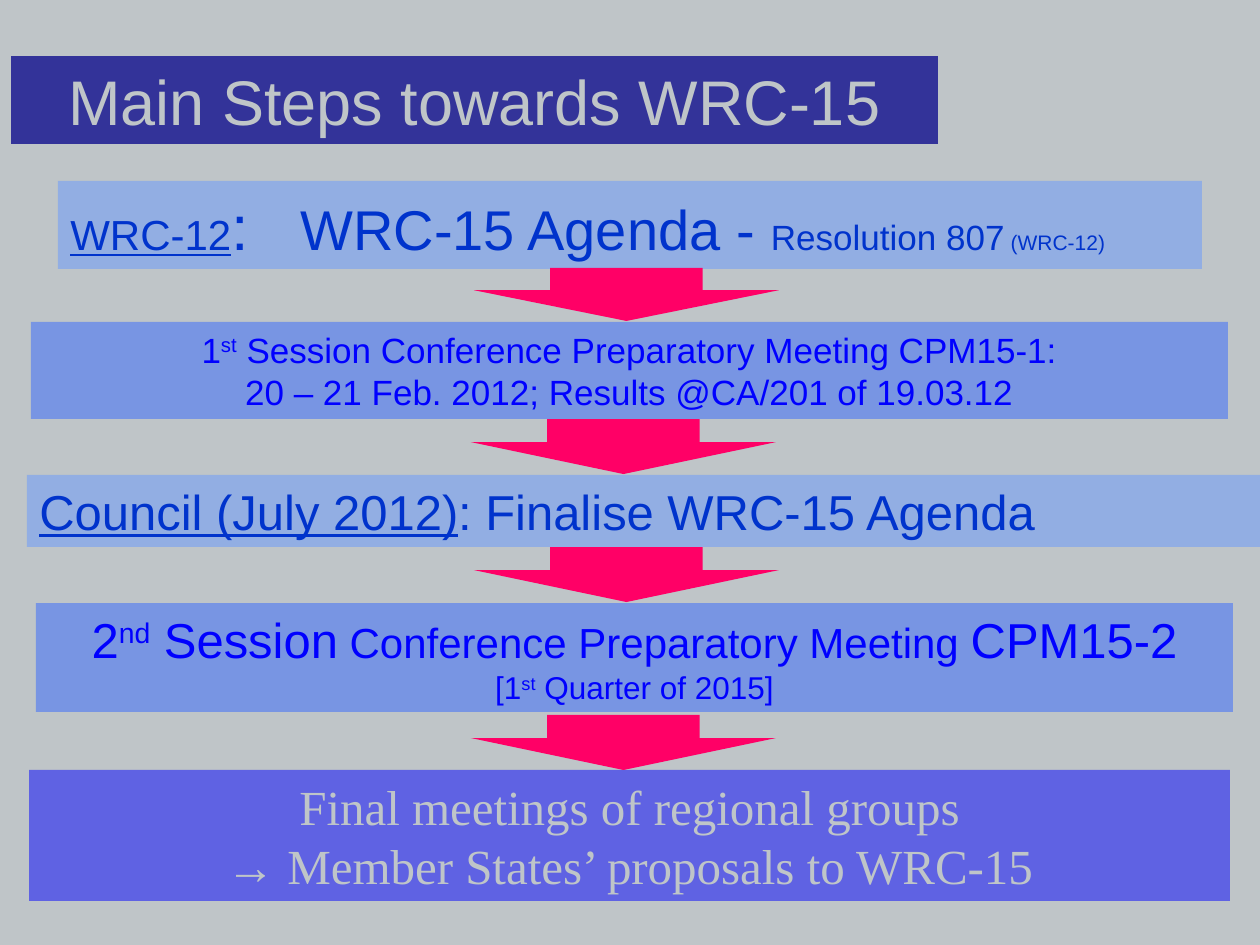
from dataclasses import dataclass

from lxml import etree
from pptx import Presentation, util as u
from pptx.dml.color import RGBColor
from pptx.enum import shapes, text
from pptx.oxml.ns import qn

PX = u.Inches(1) / 126
COLORS = {
    "grey": "BFC5C8", "navy": "333399", "sky": "6699FF", "azure": "3366FF",
    "blue": "0000FF", "cobalt": "0033CC", "pink": "FF0066",
}
LEFT, CENTER = text.PP_ALIGN.LEFT, text.PP_ALIGN.CENTER


@dataclass
class Run:
    text: str
    size: int
    underline: bool = False
    raised: bool = False


@dataclass
class Step:
    box: tuple[int, int, int, int]
    fill: str
    color: str
    paragraphs: list[list[Run]]
    align: text.PP_ALIGN = CENTER
    font: str = "Arial"
    tab: int = 0


@dataclass
class Arrow:
    left: int
    top: int
    height: int = 55
    width: int = 305


BREAK = Run("\n", 0)

TITLE = Step((11, 56, 927, 88), "navy", "grey",
             [[Run("Main Steps towards WRC-15", 36)]])

STEPS = [
    Step((58, 181, 1144, 88), "sky", "cobalt", [[
        Run("WRC-12", 24, underline=True), Run(":\t", 36),
        Run("WRC-15 Agenda - ", 32), Run("Resolution 807", 20),
        Run(" (WRC-12)", 12)]], LEFT, tab=230),
    Step((31, 322, 1197, 97), "azure", "blue", [[
        Run("1", 20), Run("st", 20, raised=True),
        Run(" Session Conference Preparatory Meeting CPM15-1:", 20), BREAK,
        Run("20 – 21 Feb. 2012; Results @CA/201 of 19.03.12", 20)]]),
    Step((27, 475, 1233, 72), "sky", "cobalt", [[
        Run("Council (July 2012)", 28, underline=True),
        Run(": Finalise WRC-15 Agenda", 28)]], LEFT),
    Step((36, 603, 1197, 109), "azure", "blue", [[
        Run("2", 28), Run("nd", 28, raised=True), Run(" Session", 28),
        Run(" Conference Preparatory Meeting ", 24), Run("CPM15-2", 28), BREAK,
        Run("[1", 18), Run("st", 18, raised=True),
        Run(" Quarter of 2015]", 18)]]),
    Step((29, 770, 1201, 131), "blue", "grey", [
        [Run("Final meetings of regional groups", 28)],
        [Run("→ Member States’ proposals to WRC-15", 28)]],
        font="Times New Roman"),
]

ARROWS = [Arrow(474, 268, 53), Arrow(471, 419), Arrow(474, 547), Arrow(471, 715)]


def px(n: int) -> int:
    return round(n * PX)


def rgb(name: str) -> RGBColor:
    return RGBColor.from_string(COLORS[name])


def paint(sp, color: str, alpha: int = 100) -> None:
    sp.fill.solid()
    sp.fill.fore_color.rgb = rgb(color)
    sp.line.fill.background()
    if alpha < 100:
        clr = sp.fill._xPr.find(qn("a:solidFill"))[0]
        etree.SubElement(clr, qn("a:alpha"), val=str(alpha * 1000))


def write(sp, step: Step, anchor: text.MSO_ANCHOR) -> None:
    tf = sp.text_frame
    tf.word_wrap = True
    tf.auto_size = text.MSO_AUTO_SIZE.NONE
    tf.vertical_anchor = anchor
    for i, runs in enumerate(step.paragraphs):
        p = tf.add_paragraph() if i else tf.paragraphs[0]
        p.alignment = step.align
        if step.tab:
            tabs = etree.SubElement(p._p.get_or_add_pPr(), qn("a:tabLst"))
            etree.SubElement(tabs, qn("a:tab"), pos=str(px(step.tab)), algn="l")
        p.font.name = step.font
        p.font.color.rgb = rgb(step.color)
        for run in runs:
            if run is BREAK:
                p.add_line_break()
                continue
            r = p.add_run()
            r.text = run.text
            r.font.size = u.Pt(run.size)
            if run.underline:
                r.font.underline = True
            if run.raised:
                r._r.get_or_add_rPr().set("baseline", "30000")


def add_title(s, step: Step) -> None:
    sp = s.shapes.title
    sp.left, sp.top, sp.width, sp.height = map(px, step.box)
    paint(sp, step.fill)
    write(sp, step, text.MSO_ANCHOR.MIDDLE)


def add_step(s, step: Step) -> None:
    sp = s.shapes.add_shape(shapes.MSO_SHAPE.RECTANGLE, *map(px, step.box))
    sp.shadow.inherit = False
    paint(sp, step.fill, 50)
    write(sp, step, text.MSO_ANCHOR.TOP)


def add_arrow(s, arrow: Arrow) -> None:
    box = (arrow.left, arrow.top, arrow.width, arrow.height)
    sp = s.shapes.add_shape(shapes.MSO_SHAPE.DOWN_ARROW, *map(px, box))
    sp.shadow.inherit = False
    sp.adjustments[0], sp.adjustments[1] = 0.5, 0.58
    paint(sp, "pink")


def main() -> None:
    prs = Presentation()
    prs.slide_width, prs.slide_height = u.Inches(10), u.Inches(7.5)
    s = prs.slides.add_slide(prs.slide_layouts[5])
    s.background.fill.solid()
    s.background.fill.fore_color.rgb = rgb("grey")
    add_title(s, TITLE)
    for step in STEPS:
        add_step(s, step)
    for arrow in ARROWS:
        add_arrow(s, arrow)
    prs.save("out.pptx")


if __name__ == "__main__":
    main()
